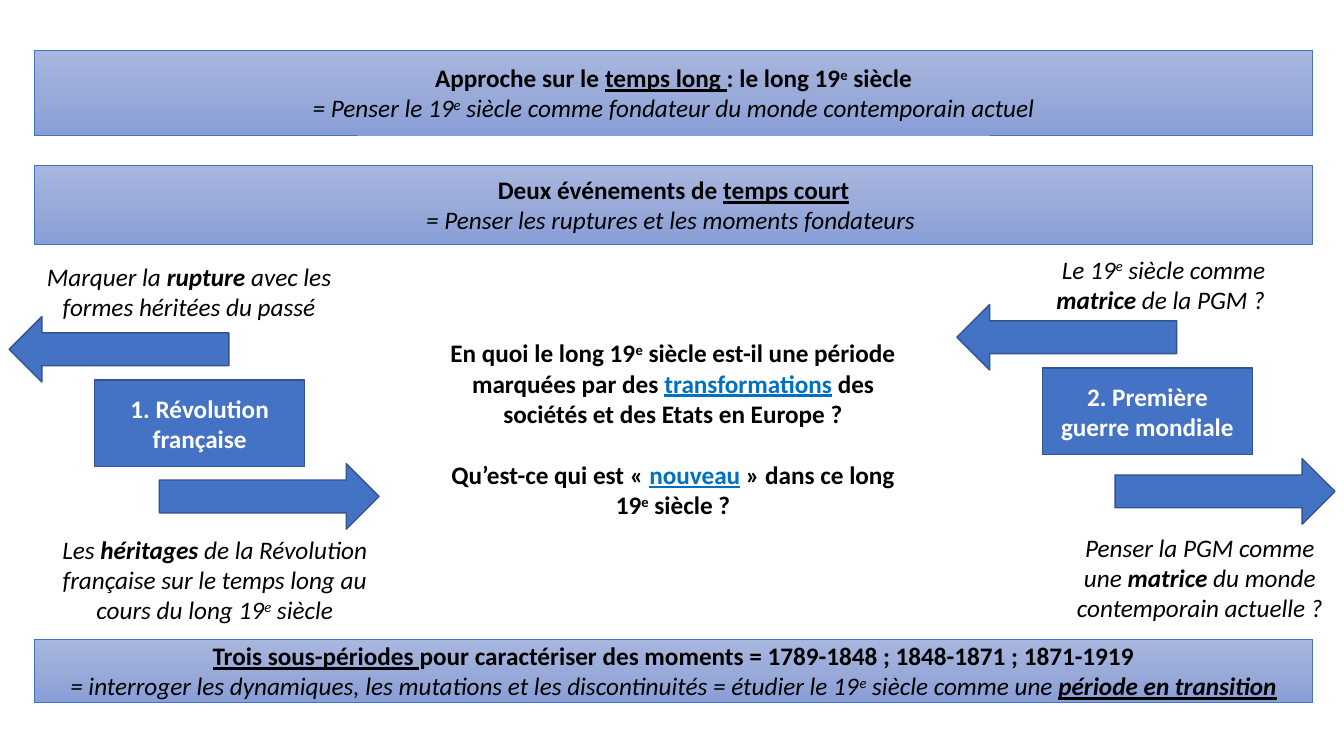
import copy
import dataclasses

import pptx
import pptx.dml.color
import pptx.enum.shapes
import pptx.enum.text
import pptx.util

Inches = pptx.util.Inches
Pt = pptx.util.Pt
Rgb = pptx.dml.color.RGBColor.from_string
Kind = pptx.enum.shapes.MSO_SHAPE


@dataclasses.dataclass(frozen=True)
class Theme:
    """Colours, font and sizes of the slide."""
    font: str = "Calibri"
    size: float = 18
    gap: float = 22
    ink: str = "000000"
    pale: str = "FFFFFF"
    key: str = "0070C0"
    main: str = "4472C4"
    edge: str = "325491"
    fade: tuple = ((0, "A8B7DF"), (0.5, "9AABD9"), (1, "889ED7"))
    thin: float = 0.5
    line: float = 1


THEME = Theme()


def write(frame, paras, color=THEME.ink, middle=False, gap=0):
    """Fill a frame with runs marked b, i, u, ^ (raised) or k (key colour)."""
    frame.word_wrap = True
    anchor = pptx.enum.text.MSO_ANCHOR
    frame.vertical_anchor = anchor.MIDDLE if middle else anchor.TOP
    for num, runs in enumerate(paras):
        para = frame.add_paragraph() if num else frame.paragraphs[0]
        para.alignment = pptx.enum.text.PP_ALIGN.CENTER
        if num and gap:
            para.space_before = Pt(gap)
        for text, marks in runs:
            run = para.add_run()
            run.text = text
            font = run.font
            font.name, font.size = THEME.font, Pt(THEME.size)
            font.bold, font.italic = "b" in marks, "i" in marks
            font.underline = "u" in marks
            font.color.rgb = Rgb(THEME.key if "k" in marks else color)
            if "^" in marks:
                font._element.set("baseline", "30000")


def block(slide, kind, box, line=THEME.edge, width=THEME.line):
    """Add a plain filled shape."""
    shape = slide.shapes.add_shape(kind, *map(Inches, box))
    shape.shadow.inherit = False
    shape.fill.solid()
    shape.fill.fore_color.rgb = Rgb(THEME.main)
    shape.line.color.rgb = Rgb(line)
    shape.line.width = Pt(width)
    return shape


def banner(slide, box, paras):
    """Add a wide gradient band with its text."""
    shape = block(slide, Kind.RECTANGLE, box, THEME.main, THEME.thin)
    fill = shape.fill
    fill.gradient()
    fill.gradient_angle = 270
    first = shape.element.spPr.xpath("./a:gradFill/a:gsLst/a:gs")[0]
    first.addnext(copy.deepcopy(first))
    for stop, (place, color) in zip(fill.gradient_stops, THEME.fade):
        stop.position = place
        stop.color.rgb = Rgb(color)
    write(shape.text_frame, paras, middle=True)


def note(slide, box, paras, gap=0):
    """Add a free text box."""
    frame = slide.shapes.add_textbox(*map(Inches, box)).text_frame
    write(frame, paras, gap=gap)
    frame.auto_size = pptx.enum.text.MSO_AUTO_SIZE.SHAPE_TO_FIT_TEXT


def event(slide, box, title, notes):
    """Add a titled card, an arrow back at top left, one on at bottom right."""
    left, top, wide, high = box
    long, thick = 2.18, 0.65
    back = block(slide, Kind.RIGHT_ARROW, (left, top, long, thick))
    back.rotation = 180
    block(slide, Kind.RIGHT_ARROW,
          (left + wide - long, top + high - thick, long, thick))
    card = block(slide, Kind.RECTANGLE, (left + 0.85, top + 0.63, 2.08, 0.86))
    write(card.text_frame, [[(title, "b")]], color=THEME.pale, middle=True)
    for (x, y, *size), runs in notes:
        note(slide, (left + x, top + y, *size), [runs])


def build():
    """Build the slide and save it."""
    deck = pptx.Presentation()
    deck.slide_width, deck.slide_height = Inches(13.33), Inches(7.5)
    slide = deck.slides.add_slide(deck.slide_layouts[6])
    bands = [
        (0.5, 0.84, [
            [("Approche sur le ", "b"), ("temps long ", "bu"),
             (": le long 19", "b"), ("e", "b^"), (" siècle", "b")],
            [("= Penser le 19", "i"), ("e", "i^"),
             (" siècle comme fondateur du monde contemporain actuel", "i")]]),
        (1.64, 0.78, [
            [("Deux événements de ", "b"), ("temps court", "bu")],
            [("= Penser les ruptures et les moments fondateurs ", "i")]]),
        (6.34, 0.63, [
            [("Trois sous-périodes ", "bu"),
             ("pour caractériser des moments = "
              "1789-1848 ; 1848-1871 ; 1871-1919", "b")],
            [("= interroger les dynamiques, les mutations et les "
              "discontinuités = étudier le 19", "i"), ("e", "i^"),
             (" siècle comme une ", "i"),
             ("période en transition", "biu")]]),
    ]
    for top, high, paras in bands:
        banner(slide, (0.34, top, 12.68, high), paras)

    event(slide, (0.09, 3.14, 3.67, 2.11), "1. Révolution française", [
        ((0.25, -0.6, 3.07, 0.71),
         [("Marquer la ", "i"), ("rupture", "bi"),
          (" avec les formes héritées du passé", "i")]),
        ((0.27, 2.11, 3.54, 1.01),
         [("Les ", "i"), ("héritages", "bi"),
          (" de la Révolution française sur le temps long "
           "au cours du long 19", "i"), ("e", "i^"), (" siècle", "i")])])
    event(slide, (9.49, 3.02, 3.75, 2.18), "2. Première guerre mondiale", [
        ((0.66, -0.55, 2.78, 0.71),
         [("Le 19", "i"), ("e", "i^"), (" siècle comme ", "i"),
          ("matrice", "bi"), (" de la PGM ? ", "i")]),
        ((1.08, 2.21, 2.66, 1.01),
         [("Penser la PGM comme une ", "i"), ("matrice", "bi"),
          (" du monde contemporain actuelle ?", "i")])])

    note(slide, (4.33, 3.3, 4.69, 1.92), [
        [("En quoi le long 19", "b"), ("e", "b^"),
         (" siècle est-il une période marquées par des ", "b"),
         ("transformations", "buk"),
         (" des sociétés et des Etats en Europe ?", "b")],
        [("Qu’est-ce qui est « ", "b"), ("nouveau", "buk"),
         (" » dans ce long 19", "b"), ("e", "b^"), (" siècle ?", "b")],
    ], gap=THEME.gap)
    deck.save("out.pptx")


if __name__ == "__main__":
    build()
